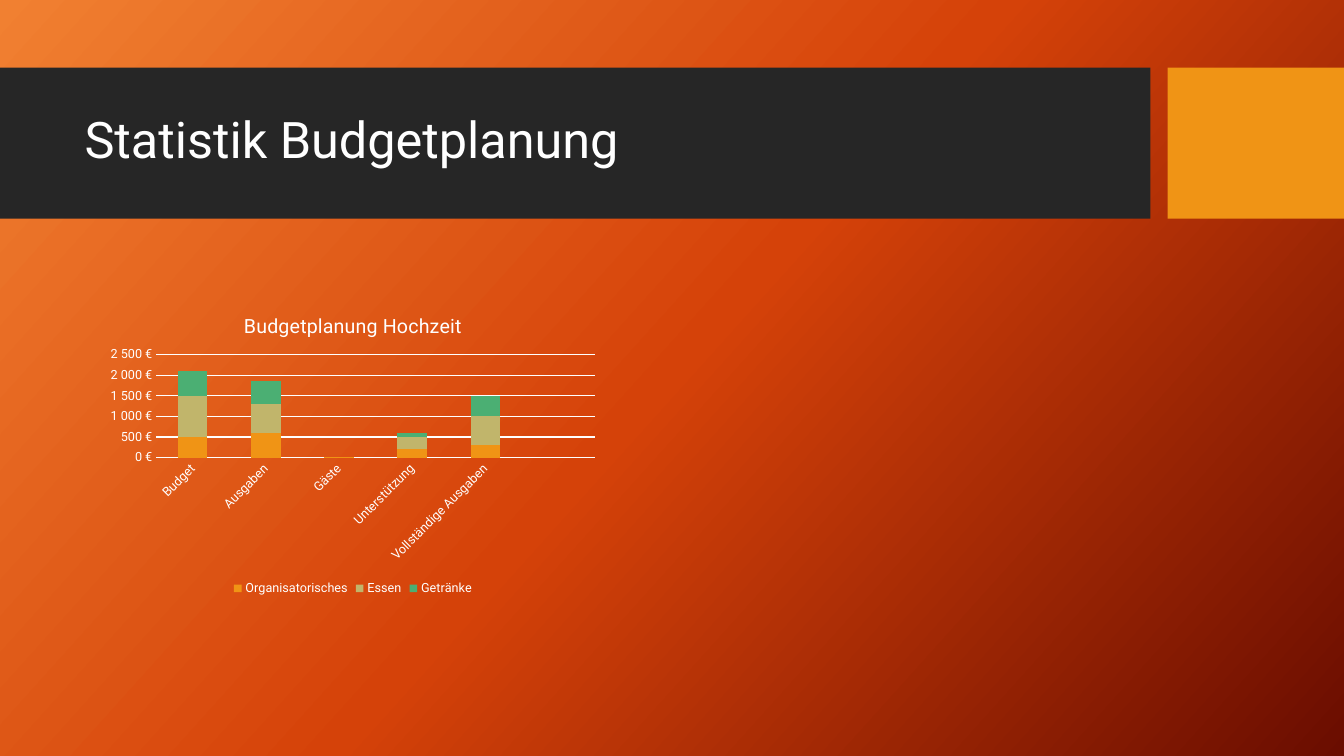
from copy import deepcopy

from pptx import Presentation
from pptx.chart.data import CategoryChartData as ChartData
from pptx.dml.color import RGBColor
from pptx.enum.chart import XL_CHART_TYPE as ChartType
from pptx.enum.chart import XL_LEGEND_POSITION as LegendPosition
from pptx.enum.chart import XL_TICK_MARK as TickMark
from pptx.enum.shapes import MSO_SHAPE as ShapeType
from pptx.enum.text import MSO_ANCHOR as Anchor
from pptx.oxml import parse_xml
from pptx.oxml.ns import nsdecls
from pptx.util import Inches, Pt

WHITE = RGBColor(0xFF, 0xFF, 0xFF)
CHARCOAL = RGBColor(0x26, 0x26, 0x26)
AMBER = RGBColor(0xF0, 0x94, 0x15)
SAND = RGBColor(0xC1, 0xB5, 0x6B)
GREEN = RGBColor(0x4B, 0xAF, 0x73)
BACKGROUND = [
    RGBColor(0xF1, 0x80, 0x31),
    RGBColor(0xD5, 0x42, 0x09),
    RGBColor(0x6A, 0x0D, 0x00),
]

WIDTH, HEIGHT = 13.33, 7.5
EURO_FORMAT = r"#\ ##0\ [$€-1];[Red]\-#\ ##0\ [$€-1]"
CATEGORIES = ["Budget", "Ausgaben", "Gäste", "Unterstützung", "Vollständige Ausgaben", ""]
SERIES = [
    ("Organisatorisches", AMBER, [500, 600, 20, 200, 300, None]),
    ("Essen", SAND, [1000, 700, None, 300, 700, None]),
    ("Getränke", GREEN, [600, 550, None, 100, 500, None]),
]
PLOT_AREA = {"x": 0.11, "y": 0.19, "w": 0.87, "h": 0.34}


def style_font(font, size=9, color=WHITE, name="Roboto"):
    font.size, font.name, font.bold = Pt(size), name, False
    font.color.rgb = color


def write_text(text_frame, text, line_spacing=None, **font_format):
    paragraph = text_frame.paragraphs[0]
    paragraph.line_spacing = line_spacing
    run = paragraph.add_run()
    run.text = text
    style_font(run.font, **font_format)


class SlideBuilder:
    """Places elements by shares of the slide's width and height."""

    def __init__(self, presentation):
        self.presentation = presentation
        self.slide = presentation.slides.add_slide(presentation.slide_layouts[6])

    def area(self, left, top, width, height):
        across, down = self.presentation.slide_width, self.presentation.slide_height
        return [int(share * side) for share, side in
                zip((left, top, width, height), (across, down, across, down))]

    def background(self, colors, angle):
        fill = self.slide.background.fill
        fill.gradient()
        fill.gradient_angle = 360 - angle
        stop_list = self.slide.element.xpath(".//a:gsLst")[0]
        stop_list.append(deepcopy(stop_list[-1]))
        for index, (stop, color) in enumerate(zip(fill.gradient_stops, colors)):
            stop.position = index / (len(colors) - 1)
            stop.color.rgb = color

    def block(self, area, color):
        shape = self.slide.shapes.add_shape(ShapeType.RECTANGLE, *self.area(*area))
        shape.shadow.inherit = False
        shape.fill.solid()
        shape.fill.fore_color.rgb = color
        shape.line.fill.background()

    def text(self, area, text, **text_format):
        text_frame = self.slide.shapes.add_textbox(*self.area(*area)).text_frame
        text_frame.word_wrap = True
        text_frame.vertical_anchor = Anchor.MIDDLE
        write_text(text_frame, text, **text_format)

    def stacked_chart(self, area, title, categories, series_rows):
        data = ChartData(number_format=EURO_FORMAT)
        data.categories = categories
        for name, _, values in series_rows:
            data.add_series(name, values)
        chart = self.slide.shapes.add_chart(
            ChartType.COLUMN_STACKED, *self.area(*area), data).chart
        style_font(chart.font, size=10)
        chart.has_title = True
        write_text(chart.chart_title.text_frame, title, size=14)
        chart.chart_title.include_in_layout = False

        # Columns
        plot = chart.plots[0]
        plot.gap_width, plot.overlap, plot.vary_by_categories = 150, 100, False
        for series, (_, color, _) in zip(plot.series, series_rows):
            series.format.fill.solid()
            series.format.fill.fore_color.rgb = color
        self.fix_plot_area(chart)

        # Axes
        for axis in (chart.category_axis, chart.value_axis):
            axis.major_tick_mark = axis.minor_tick_mark = TickMark.NONE
            style_font(axis.tick_labels.font)
        chart.category_axis.has_major_gridlines = False
        chart.value_axis.has_major_gridlines = True
        chart.value_axis.maximum_scale, chart.value_axis.major_unit = 2500, 500
        chart.value_axis.minimum_scale = 0
        chart.value_axis.tick_labels.number_format = EURO_FORMAT
        chart.value_axis.tick_labels.number_format_is_linked = False
        chart.value_axis.format.line.fill.background()
        for ruled in (chart.category_axis, chart.value_axis.major_gridlines):
            ruled.format.line.color.rgb = WHITE
            ruled.format.line.width = Pt(0.75)
        label_body = chart.element.xpath(".//c:catAx/c:txPr/a:bodyPr")[0]
        label_body.set("rot", str(-45 * 60000))
        label_body.set("vert", "horz")

        # Legend
        chart.has_legend = True
        chart.legend.position = LegendPosition.BOTTOM
        chart.legend.include_in_layout = False
        style_font(chart.legend.font)

    def fix_plot_area(self, chart):
        plot_area = chart.element.xpath(".//c:plotArea")[0]
        for layout in plot_area.xpath("./c:layout"):
            plot_area.remove(layout)
        modes = '<c:xMode val="edge"/><c:yMode val="edge"/>'
        sides = "".join(f'<c:{side} val="{share}"/>' for side, share in PLOT_AREA.items())
        plot_area.insert(0, parse_xml(
            f'<c:layout {nsdecls("c")}><c:manualLayout><c:layoutTarget val="inner"/>'
            f"{modes}{sides}</c:manualLayout></c:layout>"))


def main():
    presentation = Presentation()
    presentation.slide_width, presentation.slide_height = Inches(WIDTH), Inches(HEIGHT)
    builder = SlideBuilder(presentation)
    builder.background(BACKGROUND, angle=42)

    # Title band and accent block
    band_top, band_height = 0.67 / HEIGHT, 1.5 / HEIGHT
    builder.block((0, band_top, 11.41 / WIDTH, band_height), CHARCOAL)
    builder.block((11.58 / WIDTH, band_top, 1.75 / WIDTH, band_height), AMBER)
    builder.text((0.74 / WIDTH, 0.82 / HEIGHT, 10.51 / WIDTH, 1.18 / HEIGHT),
                 "Statistik Budgetplanung", size=36, line_spacing=0.9)

    # Budget chart
    builder.stacked_chart((1 / WIDTH, 2.95 / HEIGHT, 5 / WIDTH, 3 / HEIGHT),
                          "Budgetplanung Hochzeit", CATEGORIES, SERIES)
    presentation.save("out.pptx")


if __name__ == "__main__":
    main()
